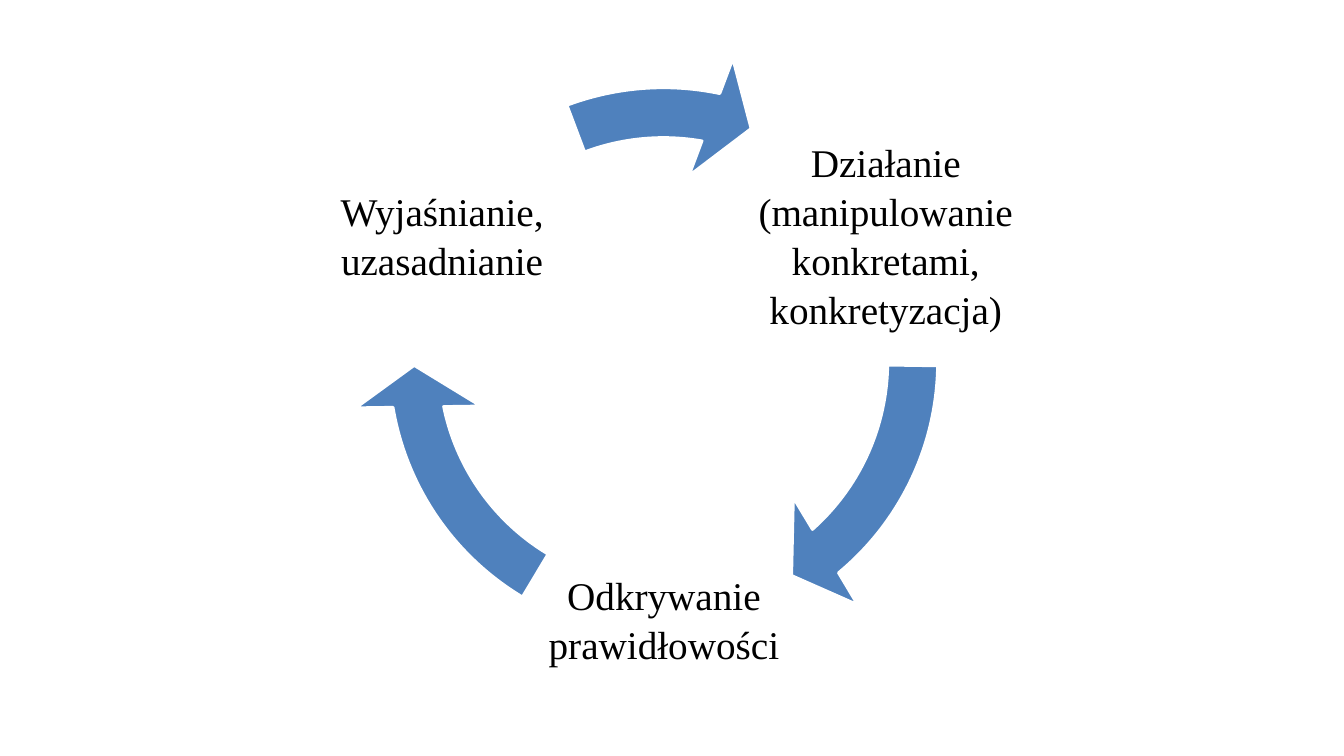
import pptx
import pptx.util
import pptx.dml.color
import pptx.enum.shapes
import pptx.enum.text

Inches, Pt = pptx.util.Inches, pptx.util.Pt
RGB = pptx.dml.color.RGBColor.from_string
COLORS = {"arrow": "4F81BD", "edge": "FFFFFF", "text": "000000"}
FONT = "Times New Roman"

prs = pptx.Presentation()
prs.slide_width, prs.slide_height = Inches(13.33), Inches(7.5)
s = prs.slides.add_slide(prs.slide_layouts[6])

LABEL = 2.61  # side of each square label
RING = 6.18  # side of the square that holds the ring of arrows
RING_LEFT, RING_TOP = 3.49, 0.5
DEGREE = 0.6  # one degree in adjustment units
INSET = Inches(0.04)

# label, left, top, then the end and start angles of the arrow leaving it
steps = [
    ("Działanie (manipulowanie konkretami, konkretyzacja)", 7.48, 1.02, 49.45, 0.83),
    ("Odkrywanie prawidłowości", 5.28, 4.83, 169.58, 120.96),
    ("Wyjaśnianie, uzasadnianie", 3.08, 1.02, 280.99, 249.42),
]

for label, left, top, end, start in steps:
    box = s.shapes.add_textbox(Inches(left), Inches(top), Inches(LABEL), Inches(LABEL))
    tf = box.text_frame
    tf.word_wrap = True
    tf.vertical_anchor = pptx.enum.text.MSO_ANCHOR.MIDDLE
    tf.margin_left = tf.margin_right = tf.margin_top = tf.margin_bottom = INSET
    p = tf.paragraphs[0]
    p.text = label
    p.alignment = pptx.enum.text.PP_ALIGN.CENTER
    p.line_spacing = 1.04
    p.font.name, p.font.size = FONT, Pt(28)
    p.font.color.rgb = RGB(COLORS["text"])

    arrow = s.shapes.add_shape(
        pptx.enum.shapes.MSO_SHAPE.CIRCULAR_ARROW,
        Inches(RING_LEFT), Inches(RING_TOP), Inches(RING), Inches(RING))
    # band width, head angle, end angle, start angle, head width
    values = (0.08, 9.59 * DEGREE, end * DEGREE, start * DEGREE, 0.1)
    for i, value in enumerate(values):
        arrow.adjustments[i] = value
    arrow.shadow.inherit = False
    arrow.fill.solid()
    arrow.fill.fore_color.rgb = RGB(COLORS["arrow"])
    arrow.line.color.rgb = RGB(COLORS["edge"])
    arrow.line.width = Pt(2)

prs.save("out.pptx")
